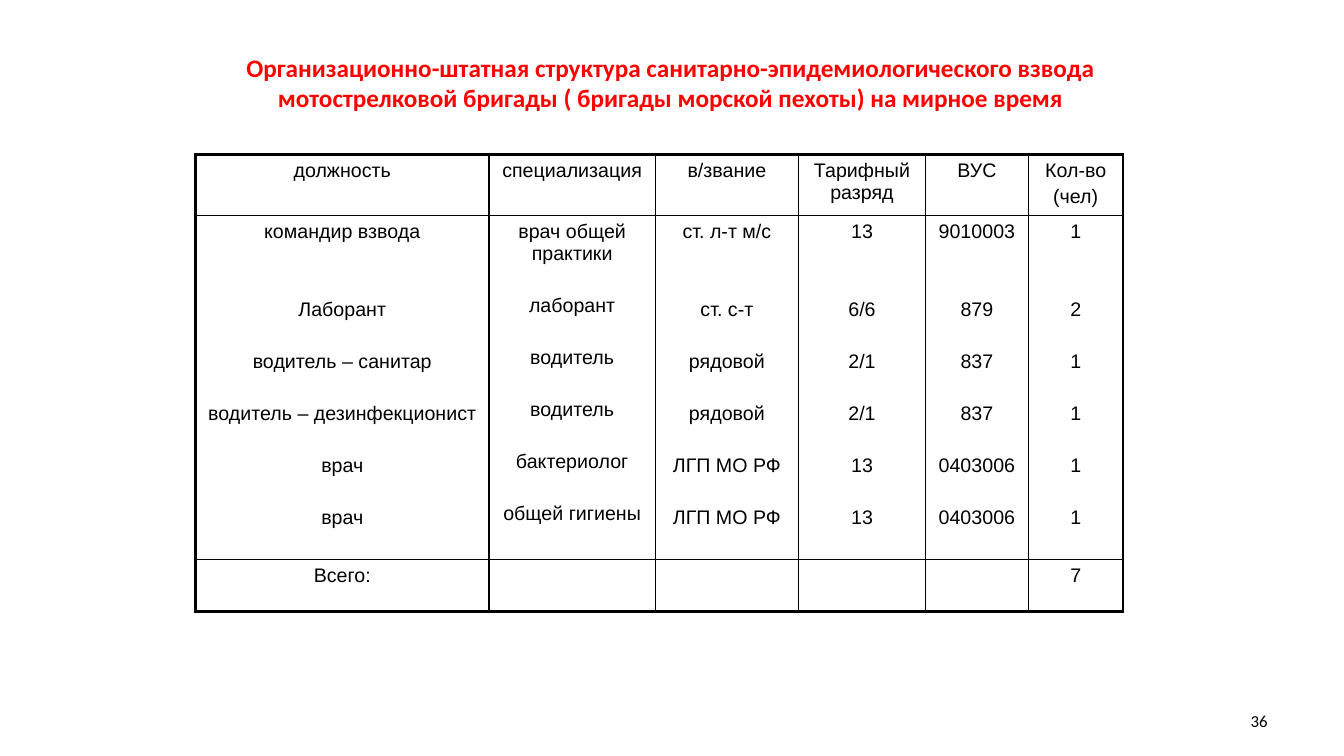
from lxml.etree import SubElement
from pptx import Presentation
from pptx.dml.color import RGBColor
from pptx.enum.text import MSO_ANCHOR, PP_ALIGN
from pptx.oxml.ns import qn
from pptx.util import Inches, Pt

COLUMN_WIDTHS = [2.91, 1.65, 1.42, 1.26, 1.02, 0.94]
ROW_HEIGHTS = [0.61, 3.41, 0.52]
HEADINGS = ["должность", "специализация", "в/звание", "Тарифный разряд", "ВУС", "Кол-во\n(чел)"]
STAFF = [
    ["командир взвода", "врач общей практики", "ст. л-т м/с", "13", "9010003", "1"],
    ["Лаборант", "лаборант", "ст. с-т", "6/6", "879", "2"],
    ["водитель – санитар", "водитель", "рядовой", "2/1", "837", "1"],
    ["водитель – дезинфекционист", "водитель", "рядовой", "2/1", "837", "1"],
    ["врач", "бактериолог", "ЛГП МО РФ", "13", "0403006", "1"],
    ["врач", "общей гигиены", "ЛГП МО РФ", "13", "0403006", "1"],
]
TOTALS = ["Всего:", "", "", "", "", "7"]
SPECIALTY_COLUMN = 1


def color(value):
    return RGBColor.from_string(value)


class StaffSlide:
    ink = "000000"
    accent = "FF0000"
    thin, thick = 1, 2.25
    line_gap, entry_gap, first_entry_gap = 2.8, 21.4, 40

    def __init__(self, deck):
        self.page = deck.slides.add_slide(deck.slide_layouts[6])

    def add_span(self, para, text, size, font, ink, align, bold=False):
        para.alignment = align
        span = para.add_run()
        span.text = text
        span.font.size = Pt(size)
        span.font.name = font
        span.font.bold = bold
        span.font.color.rgb = color(ink)

    def text(self, left, top, width, height, content, size, ink, align, bold=False):
        box = self.page.shapes.add_textbox(Inches(left), Inches(top), Inches(width), Inches(height))
        frame = box.text_frame
        frame.word_wrap = True
        frame.vertical_anchor = MSO_ANCHOR.MIDDLE
        self.add_span(frame.paragraphs[0], content, size, "Calibri", ink, align, bold)

    def border(self, cell, side, width):
        line = SubElement(cell._tc.get_or_add_tcPr(), qn(f"a:ln{side}"), w=str(Pt(width)))
        fill = SubElement(line, qn("a:solidFill"))
        SubElement(fill, qn("a:srgbClr"), val=self.ink)

    def cell(self, cell, lines, gaps, outer_sides):
        for side in "LRTB":
            self.border(cell, side, self.thick if side in outer_sides else self.thin)
        cell.fill.background()
        frame = cell.text_frame
        for index, (line, gap) in enumerate(zip(lines, gaps)):
            para = frame.add_paragraph() if index else frame.paragraphs[0]
            para.space_before = Pt(gap)
            if line:
                self.add_span(para, line, 14, "Arial", self.ink, PP_ALIGN.CENTER)

    def table(self, left, top, widths, heights, rows):
        frame = self.page.shapes.add_table(
            len(heights), len(widths), Inches(left), Inches(top), Inches(sum(widths)), Inches(sum(heights))
        )
        table = frame.table
        table.first_row = table.horz_banding = False
        for column, width in zip(table.columns, widths):
            column.width = Inches(width)
        for row, height in zip(table.rows, heights):
            row.height = Inches(height)
        last_row, last_column = len(heights) - 1, len(widths) - 1
        for r, row in enumerate(rows):
            for c, lines in enumerate(row):
                edges = {"L": c == 0, "R": c == last_column, "T": r == 0, "B": r == last_row}
                outer_sides = [side for side, outer in edges.items() if outer]
                gaps = [0, self.line_gap]
                if r == 1:
                    first_gap = self.entry_gap if c == SPECIALTY_COLUMN else self.first_entry_gap
                    gaps = [0, first_gap] + [self.entry_gap] * (len(lines) - 2)
                self.cell(table.cell(r, c), lines, gaps, outer_sides)


def main():
    deck = Presentation()
    deck.slide_width, deck.slide_height = Inches(13.33), Inches(7.5)
    slide = StaffSlide(deck)
    slide.text(
        2.15, 0.55, 9, 0.54,
        "Организационно-штатная структура санитарно-эпидемиологического взвода "
        "мотострелковой бригады ( бригады морской пехоты) на мирное время",
        18, slide.accent, PP_ALIGN.CENTER, bold=True,
    )
    rows = [
        [heading.split("\n") for heading in HEADINGS],
        list(zip(*STAFF)),
        [[total] for total in TOTALS],
    ]
    slide.table(1.94, 1.53, COLUMN_WIDTHS, ROW_HEIGHTS, rows)
    slide.text(9.56, 6.95, 3.11, 0.4, "36", 12, slide.ink, PP_ALIGN.RIGHT)
    deck.save("out.pptx")


if __name__ == "__main__":
    main()
